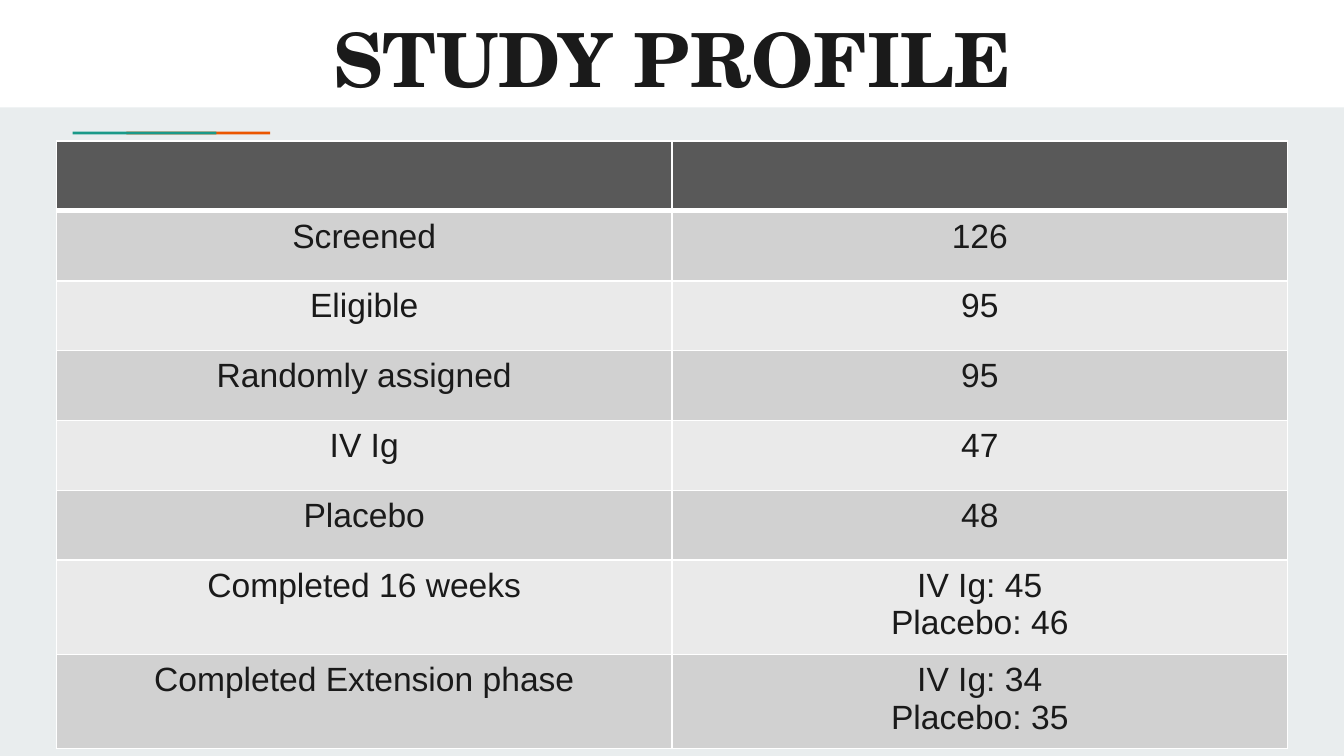
import dataclasses

import pptx
import pptx.dml.color
import pptx.enum.shapes
import pptx.enum.text
import pptx.oxml
import pptx.oxml.ns
import pptx.util

Inches = pptx.util.Inches
Pt = pptx.util.Pt
RGB = pptx.dml.color.RGBColor.from_string
ALIGN = pptx.enum.text.PP_ALIGN
ANCHOR = pptx.enum.text.MSO_ANCHOR
RECT = pptx.enum.shapes.MSO_SHAPE.RECTANGLE


@dataclasses.dataclass(frozen=True)
class Theme:
    background: str = "E9EDEE"
    white: str = "FFFFFF"
    ink: str = "1A1A1A"
    orange: str = "EB5600"
    teal: str = "1A9988"
    header: str = "595959"
    bands: tuple = ("D1D1D1", "EAEAEA")
    title_font: str = "TeX Gyre Schola"
    body_font: str = "Arial"
    title_size: int = 40
    body_size: int = 18
    border: int = 1
    header_border: int = 3


THEME = Theme()

PROFILE = [
    ("", ""),
    ("Screened", "126"),
    ("Eligible", "95"),
    ("Randomly assigned", "95"),
    ("IV Ig", "47"),
    ("Placebo", "48"),
    ("Completed 16 weeks", "IV Ig: 45\nPlacebo: 46"),
    ("Completed Extension phase", "IV Ig: 34\nPlacebo: 35"),
]


def set_attrs(obj, values):
    for name, value in values.items():
        setattr(obj, name, value)


def write_text(tf, text, **font):
    tf.text = text
    for p in tf.paragraphs:
        p.alignment = ALIGN.CENTER
        for r in p.runs:
            set_attrs(r.font, font)
            r.font.color.rgb = RGB(THEME.ink)


def add_bar(s, x, y, w, h, color):
    sp = s.shapes.add_shape(RECT, Inches(x), Inches(y), Inches(w), Inches(h))
    sp.shadow.inherit = False
    sp.fill.solid()
    sp.fill.fore_color.rgb = RGB(color)
    sp.line.fill.background()


def add_title(s, x, y, w, h):
    add_bar(s, x, y, w, h, THEME.white)
    margin = 0.8
    sp = s.shapes.add_textbox(Inches(x + margin), Inches(y - 0.02),
                              Inches(w - 2 * margin), Inches(h + 0.1))
    tf = sp.text_frame
    inset = Inches(0.1)
    set_attrs(tf, {
        "word_wrap": True, "vertical_anchor": ANCHOR.MIDDLE,
        "margin_left": inset, "margin_right": inset,
        "margin_top": inset, "margin_bottom": inset,
    })
    write_text(tf, "STUDY PROFILE", name=THEME.title_font,
               size=Pt(THEME.title_size), bold=True)


def add_accent(s, x, y, w, h):
    bar_w = 1.07
    add_bar(s, x + w - bar_w, y, bar_w, h, THEME.orange)
    add_bar(s, x, y, bar_w, h, THEME.teal)


def set_border(cell, side, width):
    ns = pptx.oxml.ns.nsdecls("a")
    ln = pptx.oxml.parse_xml(
        f'<a:{side} {ns} w="{Pt(width)}"><a:solidFill>'
        f'<a:srgbClr val="{THEME.white}"/></a:solidFill></a:{side}>')
    cell._tc.get_or_add_tcPr().append(ln)


def format_cell(cell, text, row):
    below = THEME.header_border if row == 0 else THEME.border
    above = THEME.header_border if row == 1 else THEME.border
    for side, width in (("lnL", THEME.border), ("lnR", THEME.border),
                        ("lnT", above), ("lnB", below)):
        set_border(cell, side, width)
    cell.fill.solid()
    color = THEME.bands[(row - 1) % 2] if row else THEME.header
    cell.fill.fore_color.rgb = RGB(color)
    write_text(cell.text_frame, text, name=THEME.body_font,
               size=Pt(THEME.body_size), bold=False)


def add_profile_table(s, x, y, w, h):
    rows, cols = len(PROFILE), len(PROFILE[0])
    frame = s.shapes.add_table(rows, cols, Inches(x), Inches(y),
                               Inches(w), Inches(h))
    table = frame.table
    for col in table.columns:
        col.width = Inches(w / cols)
    for i, values in enumerate(PROFILE):
        table.rows[i].height = Inches(0.52)
        for j, text in enumerate(values):
            format_cell(table.cell(i, j), text, i)
    frame.height = Inches(h)


def build_slide(prs):
    s = prs.slides.add_slide(prs.slide_layouts[6])
    s.background.fill.solid()
    s.background.fill.fore_color.rgb = RGB(THEME.background)
    add_title(s, 0, 0, 10, 0.8)
    add_accent(s, 0.54, 0.98, 1.47, 0.02)
    add_profile_table(s, 0.42, 1.05, 9.16, 4.54)


def main():
    prs = pptx.Presentation()
    width = Inches(10)
    set_attrs(prs, {"slide_width": width, "slide_height": width * 9 // 16})
    build_slide(prs)
    prs.save("out.pptx")


if __name__ == "__main__":
    main()
